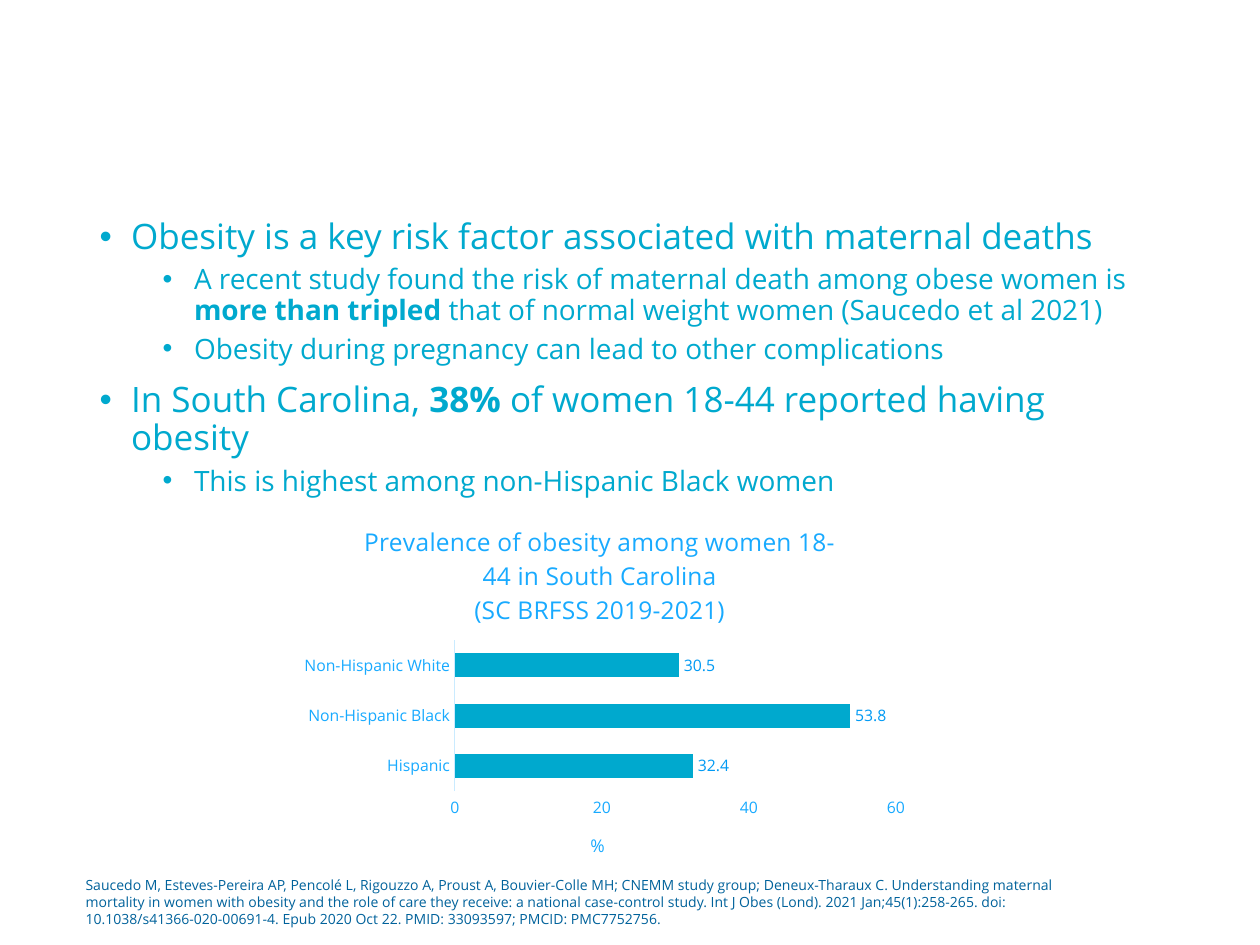
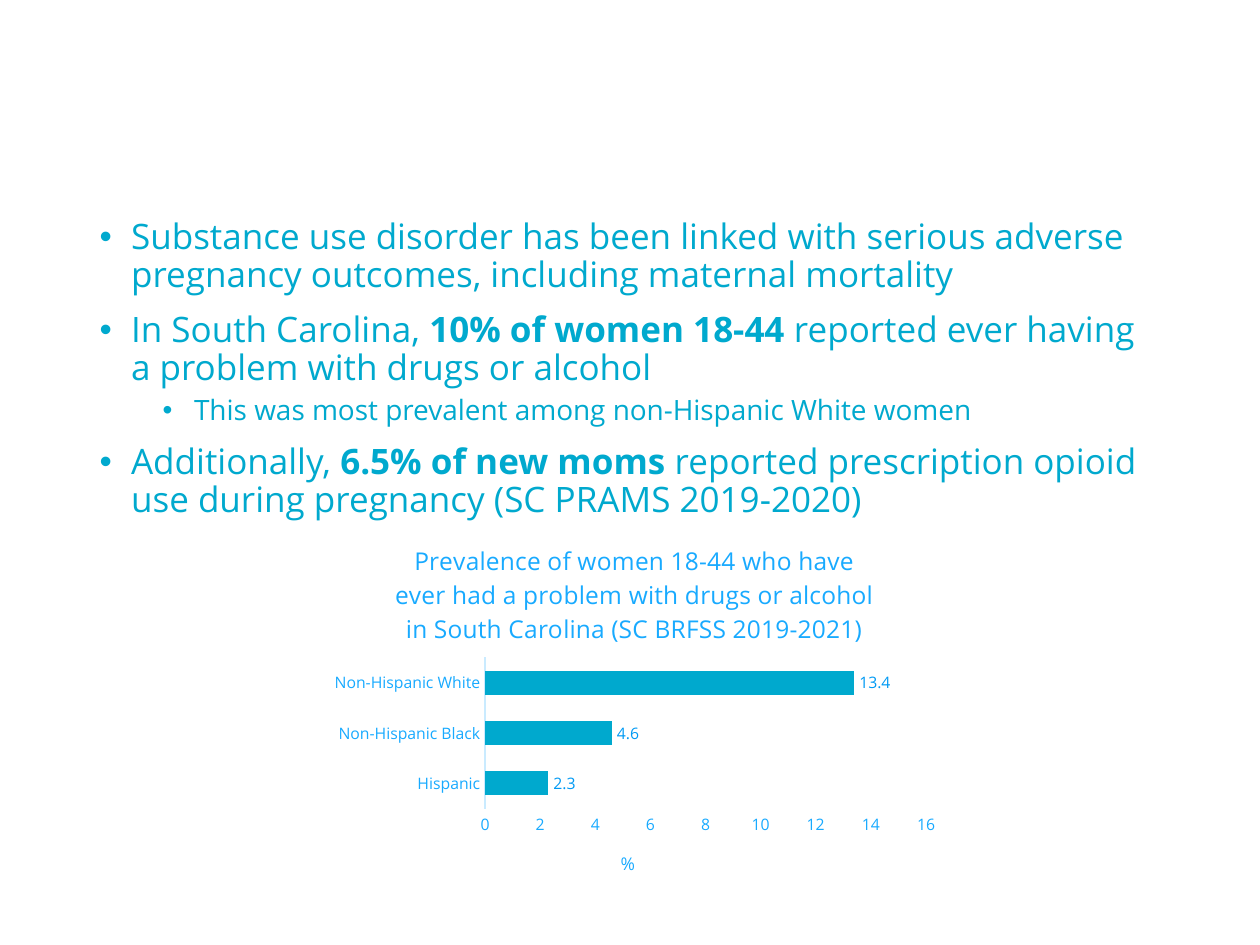
from dataclasses import dataclass

from lxml import etree
from pptx import Presentation
from pptx.chart.data import CategoryChartData
from pptx.dml.color import RGBColor
from pptx.enum.chart import XL_CHART_TYPE as ChartType
from pptx.enum.chart import XL_LABEL_POSITION as LabelPos
from pptx.enum.chart import XL_TICK_MARK as Tick
from pptx.enum.text import MSO_ANCHOR, MSO_AUTO_SIZE, PP_ALIGN
from pptx.oxml import parse_xml
from pptx.oxml.ns import nsdecls, qn
from pptx.util import Pt


@dataclass(frozen=True)
class Theme:
    font: str = "Open Sans"
    teal: str = "00A9CE"
    navy: str = "00629B"
    sky: str = "18AAFF"
    label: str = "009AF4"
    axis: str = "CAEBFF"
    body_sizes: tuple = (20, 16)
    space_before: tuple = (10, 5)
    indents: tuple = (18, 54)
    line_spacing: float = 0.9
    chart_title: int = 14
    chart_text: int = 10
    chart_label: int = 9
    citation: int = 8


T = Theme()
BODY_BOX = (49.7, 121.7, 620.6, 258.5)
CITATION_BOX = (41.8, 497.5, 601.2, 36)
CHART_SIZE = (360, 216)
GROUPS = ("Hispanic", "Non-Hispanic Black", "Non-Hispanic White")

SLIDES = [
    dict(
        bullets=[
            (0, [("Obesity is a key risk factor associated with maternal deaths", False)]),
            (1, [("A recent study found the risk of maternal death among obese women is ", False),
                 ("more than tripled ", True),
                 ("that of normal weight women (Saucedo et al 2021)", False)]),
            (1, [("Obesity during pregnancy can lead to other complications", False)]),
            (0, [("In South Carolina, ", False), ("38%", True),
                 (" of women 18-44 reported having obesity", False)]),
            (1, [("This is highest among non-Hispanic Black women", False)]),
        ],
        chart=dict(
            title=["Prevalence of obesity among women 18-44 in South Carolina",
                   "(SC BRFSS 2019-2021)"],
            values=(32.4, 53.8, 30.5), top=60, step=20, at=(162.7, 288)),
        citation="Saucedo M, Esteves-Pereira AP, Pencolé L, Rigouzzo A, Proust A, "
                 "Bouvier-Colle MH; CNEMM study group; Deneux-Tharaux C. Understanding "
                 "maternal mortality in women with obesity and the role of care they "
                 "receive: a national case-control study. Int J Obes (Lond). 2021 "
                 "Jan;45(1):258-265. doi: 10.1038/s41366-020-00691-4. Epub 2020 Oct 22. "
                 "PMID: 33093597; PMCID: PMC7752756.",
    ),
    dict(
        bullets=[
            (0, [("Substance use disorder has been linked with serious adverse "
                  "pregnancy outcomes, including maternal mortality", False)]),
            (0, [("In South Carolina, ", False), ("10% of women 18-44 ", True),
                 ("reported ever having a problem with drugs or alcohol", False)]),
            (1, [("This was most prevalent among non-Hispanic White women", False)]),
            (0, [("Additionally, ", False), ("6.5% of new moms ", True),
                 ("reported prescription opioid use during pregnancy "
                  "(SC PRAMS 2019-2020)", False)]),
        ],
        chart=dict(
            title=["Prevalence of women 18-44 who have ever had a problem with drugs "
                   "or alcohol in South Carolina (SC BRFSS 2019-2021)"],
            values=(2.3, 4.6, 13.4), top=16, step=2, at=(180, 298)),
        citation=None,
    ),
]


def format_font(font, size, color, bold=False):
    font.name, font.size, font.bold = T.font, Pt(size), bold
    font.color.rgb = RGBColor.from_string(color)


def add_text(p, text, size, color, bold=False):
    r = p.add_run()
    r.text = text
    format_font(r.font, size, color, bold)


def place(sp, box):
    sp.left, sp.top, sp.width, sp.height = (Pt(v) for v in box)


def add_bullets(slide, bullets):
    sp = slide.placeholders[1]
    place(sp, BODY_BOX)
    tf = sp.text_frame
    tf.auto_size = MSO_AUTO_SIZE.NONE
    tf.vertical_anchor = MSO_ANCHOR.TOP
    for i, (level, runs) in enumerate(bullets):
        p = tf.paragraphs[0] if i == 0 else tf.add_paragraph()
        p.level, p.line_spacing = level, T.line_spacing
        p.alignment = PP_ALIGN.LEFT
        p.space_before = Pt(T.space_before[level] if i else 0)
        p.space_after = Pt(0)
        pPr = p._p.get_or_add_pPr()
        pPr.set("marL", str(Pt(T.indents[level])))
        pPr.set("indent", str(Pt(-18)))
        etree.SubElement(pPr, qn("a:buFont"), typeface="Arial")
        etree.SubElement(pPr, qn("a:buChar"), char="•")
        for text, bold in runs:
            add_text(p, text, T.body_sizes[level], T.teal, bold)


def add_citation(slide, text):
    sp = slide.shapes.add_textbox(*(Pt(v) for v in CITATION_BOX))
    tf = sp.text_frame
    tf.word_wrap = True
    add_text(tf.paragraphs[0], text, T.citation, T.navy)


def set_layout(parent, after, x, y, w=None, h=None):
    for old in parent.findall(qn("c:layout")):
        parent.remove(old)
    target = '<c:layoutTarget val="inner"/>' if w else ""
    modes = '<c:xMode val="edge"/><c:yMode val="edge"/>'
    sizes = f'<c:w val="{w}"/><c:h val="{h}"/>' if w else ""
    layout = parse_xml(
        f'<c:layout {nsdecls("c")}><c:manualLayout>{target}{modes}'
        f'<c:x val="{x}"/><c:y val="{y}"/>{sizes}</c:manualLayout></c:layout>')
    if after is None:
        parent.insert(0, layout)
    else:
        parent.find(qn(after)).addnext(layout)


def fill_title(title, lines, size, x, y):
    tf = title.text_frame
    for i, line in enumerate(lines):
        p = tf.paragraphs[0] if i == 0 else tf.add_paragraph()
        p.alignment = PP_ALIGN.CENTER
        add_text(p, line, size, T.sky)
    set_layout(title._element, "c:tx", x, y)


def add_bar_chart(slide, title, values, top, step, at):
    data = CategoryChartData(number_format="0.0")
    data.categories = GROUPS
    data.add_series("Series 1", values)
    chart = slide.shapes.add_chart(
        ChartType.BAR_CLUSTERED, *(Pt(v) for v in at + CHART_SIZE), data).chart
    format_font(chart.font, T.chart_text, T.navy)
    chart.has_legend = False
    chart.has_title = True
    fill_title(chart.chart_title, title, T.chart_title, 0.12, 0.04)
    chart.chart_title.include_in_layout = False

    groups, percent = chart.category_axis, chart.value_axis
    for axis in (groups, percent):
        axis.major_tick_mark = axis.minor_tick_mark = Tick.NONE
        axis.has_major_gridlines = False
        format_font(axis.tick_labels.font, T.chart_label, T.sky)
    groups.format.line.color.rgb = RGBColor.from_string(T.axis)
    groups.format.line.width = Pt(0.75)
    percent.format.line.fill.background()
    percent.minimum_scale, percent.maximum_scale = 0, top
    percent.major_unit = step
    percent.tick_labels.number_format = "General"
    percent.tick_labels.number_format_is_linked = False
    percent.has_title = True
    fill_title(percent.axis_title, ["%"], T.chart_text, 0.48, 0.86)

    plot = chart.plots[0]
    plot.gap_width, plot.vary_by_categories = 110, False
    fill = plot.series[0].format.fill
    fill.solid()
    fill.fore_color.rgb = RGBColor.from_string(T.teal)
    plot.has_data_labels = True
    labels = plot.data_labels
    labels.show_value, labels.position = True, LabelPos.OUTSIDE_END
    labels.number_format, labels.number_format_is_linked = "0.0", False
    format_font(labels.font, T.chart_label, T.label)
    area = chart._chartSpace.find(".//" + qn("c:plotArea"))
    set_layout(area, None, 0.27, 0.36, 0.7, 0.4)


def main():
    prs = Presentation()
    prs.slide_width, prs.slide_height = Pt(720), Pt(540)
    for content in SLIDES:
        slide = prs.slides.add_slide(prs.slide_layouts[1])
        title = slide.shapes.title._element
        title.getparent().remove(title)
        add_bullets(slide, content["bullets"])
        if content["citation"]:
            add_citation(slide, content["citation"])
        add_bar_chart(slide, **content["chart"])
    prs.save("out.pptx")


if __name__ == "__main__":
    main()
